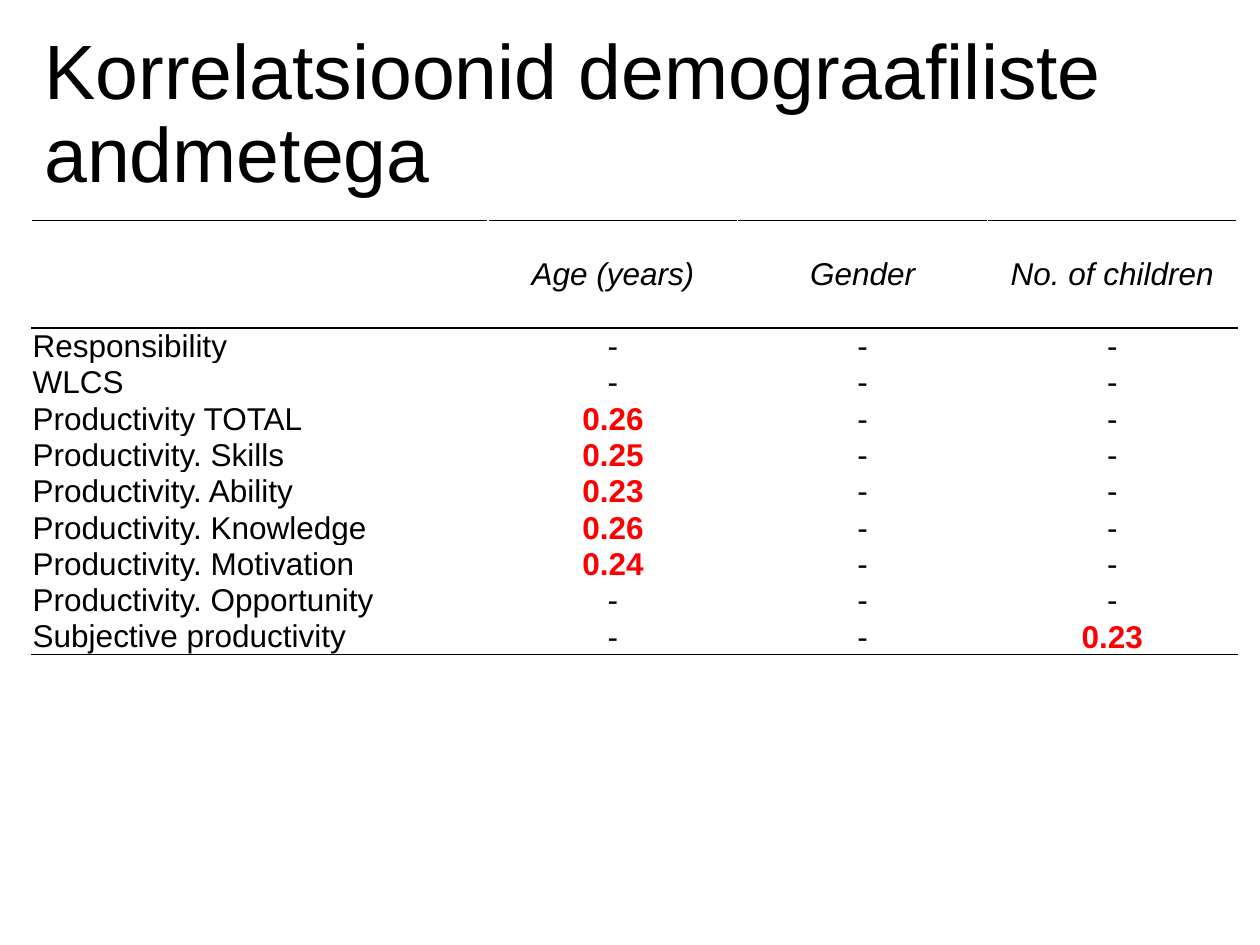
from lxml import etree
from pptx import Presentation
from pptx.dml.color import RGBColor
from pptx.enum import text
from pptx.oxml.ns import qn
from pptx.util import Cm, Pt

BLACK = RGBColor(0, 0, 0)
WHITE = RGBColor(255, 255, 255)
RED = RGBColor(255, 0, 0)
FONT = "Arial"

HEADER = ["", "Age (years)", "Gender", "No. of children"]
CORRELATIONS = [
    ("Responsibility", "-", "-", "-"),
    ("WLCS", "-", "-", "-"),
    ("Productivity TOTAL", "0.26", "-", "-"),
    ("Productivity. Skills", "0.25", "-", "-"),
    ("Productivity. Ability", "0.23", "-", "-"),
    ("Productivity. Knowledge", "0.26", "-", "-"),
    ("Productivity. Motivation", "0.24", "-", "-"),
    ("Productivity. Opportunity", "-", "-", "-"),
    ("Subjective productivity", "-", "-", "0.23"),
]


def add_run(p, words, size, color=BLACK, bold=False, italic=False):
    r = p.add_run()
    r.text = words
    r.font.name, r.font.size = FONT, Pt(size)
    r.font.bold, r.font.italic = bold, italic
    r.font.color.rgb = color


def set_borders(cell, top, bottom):
    """Draw 1 pt cell borders: white sides, given colours above and below."""
    tc_pr = cell._tc.get_or_add_tcPr()
    sides = [("a:lnL", WHITE), ("a:lnR", WHITE), ("a:lnT", top), ("a:lnB", bottom)]
    for i, (tag, color) in enumerate(sides):
        ln = etree.Element(qn(tag), w=str(Pt(1)))
        fill = etree.SubElement(ln, qn("a:solidFill"))
        etree.SubElement(fill, qn("a:srgbClr"), val=str(color))
        tc_pr.insert(i, ln)


def fill_cell(cell, words, is_header, is_label):
    cell.fill.solid()
    cell.fill.fore_color.rgb = WHITE
    if not words:
        return
    cell.margin_left = cell.margin_right = cell.margin_top = Cm(0.02)
    cell.margin_bottom = 0
    p = cell.text_frame.paragraphs[0]
    if not is_label:
        cell.vertical_anchor = text.MSO_ANCHOR.MIDDLE
        p.alignment = text.PP_ALIGN.CENTER
    significant = words.startswith("0.")
    add_run(p, words, 18, RED if significant else BLACK, significant, is_header)


def place_title(slide, left, top, width, height):
    title = slide.shapes.title
    title.left, title.top, title.width, title.height = left, top, width, height
    tf = title.text_frame
    tf.word_wrap = True
    tf.auto_size = text.MSO_AUTO_SIZE.NONE
    tf.vertical_anchor = text.MSO_ANCHOR.MIDDLE
    p = tf.paragraphs[0]
    p.alignment = text.PP_ALIGN.LEFT
    p.line_spacing = 0.9
    add_run(p, "Korrelatsioonid demograafiliste andmetega", 44)


def add_correlation_table(slide, left, top, width, height):
    rows = [HEADER, *CORRELATIONS]
    table = slide.shapes.add_table(
        len(rows), len(HEADER), left, top, width, height).table
    table.first_row = table.horz_banding = False
    label_width = Cm(9.2)
    for i, column in enumerate(table.columns):
        column.width = label_width if i == 0 else (width - label_width) // 3
    for i, row in enumerate(table.rows):
        row.height = Cm(2.16) if i == 0 else Cm(0.36)

    last = len(rows) - 1
    for i, values in enumerate(rows):
        top_color = BLACK if i in (0, 1) else WHITE
        bottom_color = BLACK if i in (0, last) else WHITE
        for j, words in enumerate(values):
            cell = table.cell(i, j)
            fill_cell(cell, words, is_header=i == 0, is_label=j == 0)
            set_borders(cell, top_color, bottom_color)


def main():
    prs = Presentation()
    prs.slide_width, prs.slide_height = Cm(25.4), Cm(19.05)
    slide = prs.slides.add_slide(prs.slide_layouts[5])
    left, width = Cm(0.64), Cm(24.3)
    place_title(slide, left, Cm(0.5), width, Cm(3.68))
    add_correlation_table(slide, left, Cm(4.45), width, Cm(9.2))
    prs.save("out.pptx")


if __name__ == "__main__":
    main()
